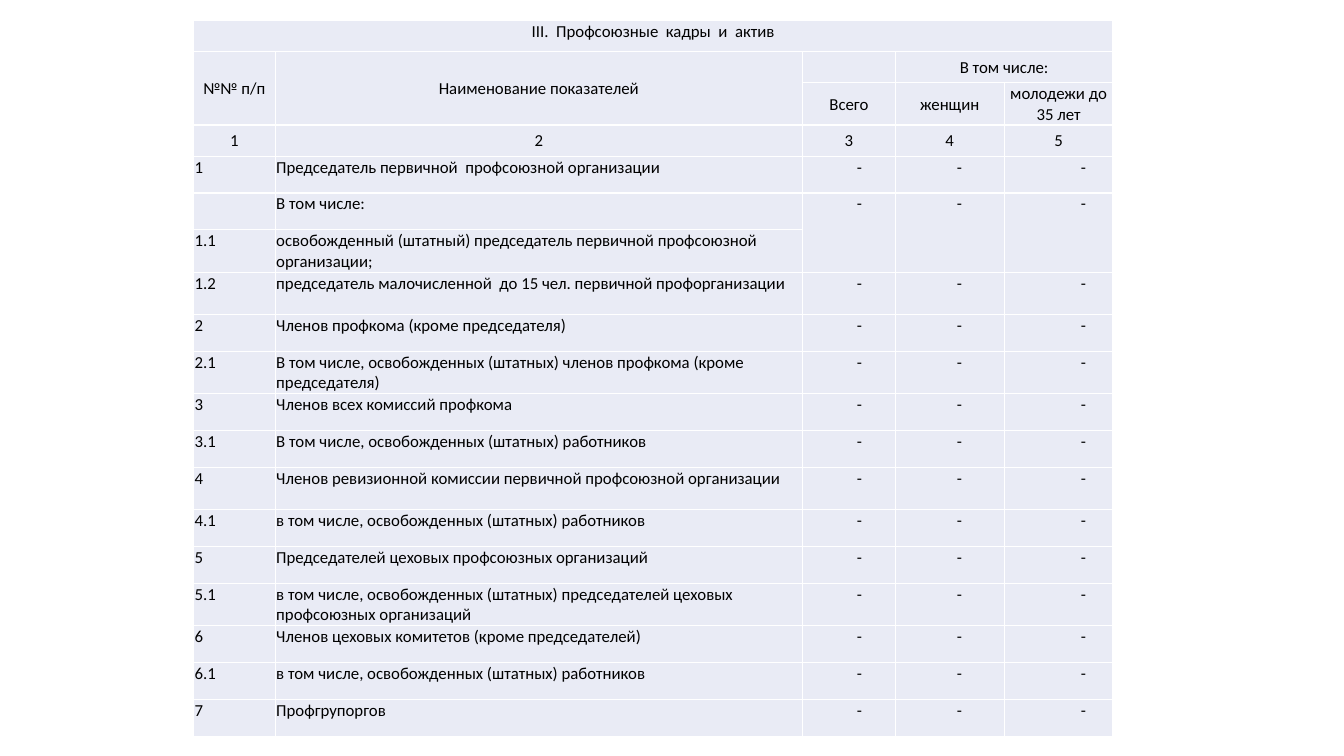
from lxml import etree
from pptx import Presentation
from pptx import util as u
from pptx.dml import color
from pptx.enum import text
from pptx.oxml import ns

COLORS = {"cell": "E9EBF5", "border": "FFFFFF", "text": "000000"}
FONT, SIZE = "Calibri", 12

HEADER = [
    ["III.  Профсоюзные  кадры  и  актив", "", "", "", ""],
    ["№№ п/п", "Наименование показателей", "", "В том числе:", ""],
    ["", "", "Всего", "женщин", "молодежи до 35 лет"],
    ["1", "2", "3", "4", "5"],
]
INDICATORS = [
    ("1", "Председатель первичной  профсоюзной организации"),
    ("", "В том числе:"),
    ("1.1", "освобожденный (штатный) председатель первичной профсоюзной организации;"),
    ("1.2", "председатель малочисленной  до 15 чел. первичной профорганизации"),
    ("2", "Членов профкома (кроме председателя)"),
    ("2.1", "В том числе, освобожденных (штатных) членов профкома (кроме председателя)"),
    ("3", "Членов всех комиссий профкома"),
    ("3.1", "В том числе, освобожденных (штатных) работников"),
    ("4", "Членов ревизионной комиссии первичной профсоюзной организации"),
    ("4.1", "в том числе, освобожденных (штатных) работников"),
    ("5", "Председателей цеховых профсоюзных организаций"),
    ("5.1", "в том числе, освобожденных (штатных) председателей цеховых профсоюзных организаций"),
    ("6", "Членов цеховых комитетов (кроме председателей)"),
    ("6.1", "в том числе, освобожденных (штатных) работников"),
    ("7", "Профгрупоргов"),
]
MERGES = [(0, 0, 0, 4), (1, 0, 2, 0), (1, 1, 2, 1), (1, 3, 1, 4),
          (5, 2, 6, 2), (5, 3, 6, 3), (5, 4, 6, 4)]

# Sizes in inches
LEFT, TOP, HEIGHT = 1.92, 0.2, 7.11
COLUMN_WIDTHS = [0.81, 5.23, 0.92, 1.08, 1.08]
DASH_INDENTS = {2: 0.54, 3: 0.61, 4: 0.76}
INSET = 0.01
LOW_ROWS, LOW = (0, 1, 3), 0.31
TALL_ROWS, TALL = (2, 6, 7, 9, 12, 15), 0.42

rows = HEADER + [[number, name, "-", "-", "-"] for number, name in INDICATORS]
for column in DASH_INDENTS:
    rows[6][column] = ""  # covered by the merged cell above
plain_count = len(rows) - len(LOW_ROWS) - len(TALL_ROWS)
plain = (HEIGHT - LOW * len(LOW_ROWS) - TALL * len(TALL_ROWS)) / plain_count


def add_borders(cell):
    properties = cell._tc.get_or_add_tcPr()
    for side in ("a:lnL", "a:lnR", "a:lnT", "a:lnB"):
        line = etree.SubElement(properties, ns.qn(side), w=str(u.Pt(1)))
        fill = etree.SubElement(line, ns.qn("a:solidFill"))
        etree.SubElement(fill, ns.qn("a:srgbClr"), val=COLORS["border"])


# Page
deck = Presentation()
deck.slide_width, deck.slide_height = u.Inches(13.33), u.Inches(7.5)
page = deck.slides.add_slide(deck.slide_layouts[6])

# Table frame
frame = page.shapes.add_table(
    len(rows), len(COLUMN_WIDTHS), u.Inches(LEFT), u.Inches(TOP),
    u.Inches(sum(COLUMN_WIDTHS)), u.Inches(HEIGHT))
table = frame.table
table.first_row = table.horz_banding = False
for column, width in zip(table.columns, COLUMN_WIDTHS):
    column.width = u.Inches(width)
for index, row in enumerate(table.rows):
    height = LOW if index in LOW_ROWS else TALL if index in TALL_ROWS else plain
    row.height = u.Inches(height)

# Cells
for r, values in enumerate(rows):
    is_header = r < len(HEADER)
    for c, value in enumerate(values):
        cell = table.cell(r, c)
        add_borders(cell)
        cell.fill.solid()
        cell.fill.fore_color.rgb = color.RGBColor.from_string(COLORS["cell"])
        indent = INSET if is_header else DASH_INDENTS.get(c, INSET)
        cell.margin_left = u.Inches(indent)
        cell.margin_right = cell.margin_top = u.Inches(INSET)
        cell.margin_bottom = 0
        if 0 < r < len(HEADER):
            cell.vertical_anchor = text.MSO_ANCHOR.MIDDLE
        para = cell.text_frame.paragraphs[0]
        para.text = value
        para.alignment = text.PP_ALIGN.CENTER if is_header else text.PP_ALIGN.LEFT
        for span in para.runs:
            span.font.name, span.font.size = FONT, u.Pt(SIZE)
            span.font.color.rgb = color.RGBColor.from_string(COLORS["text"])
        if not value:  # keep empty cells from stretching their row
            etree.SubElement(para._p, ns.qn("a:endParaRPr"), sz=str(SIZE * 100))

# Merged cells
for top, left, bottom, right in MERGES:
    table.cell(top, left).merge(table.cell(bottom, right))

deck.save("out.pptx")
